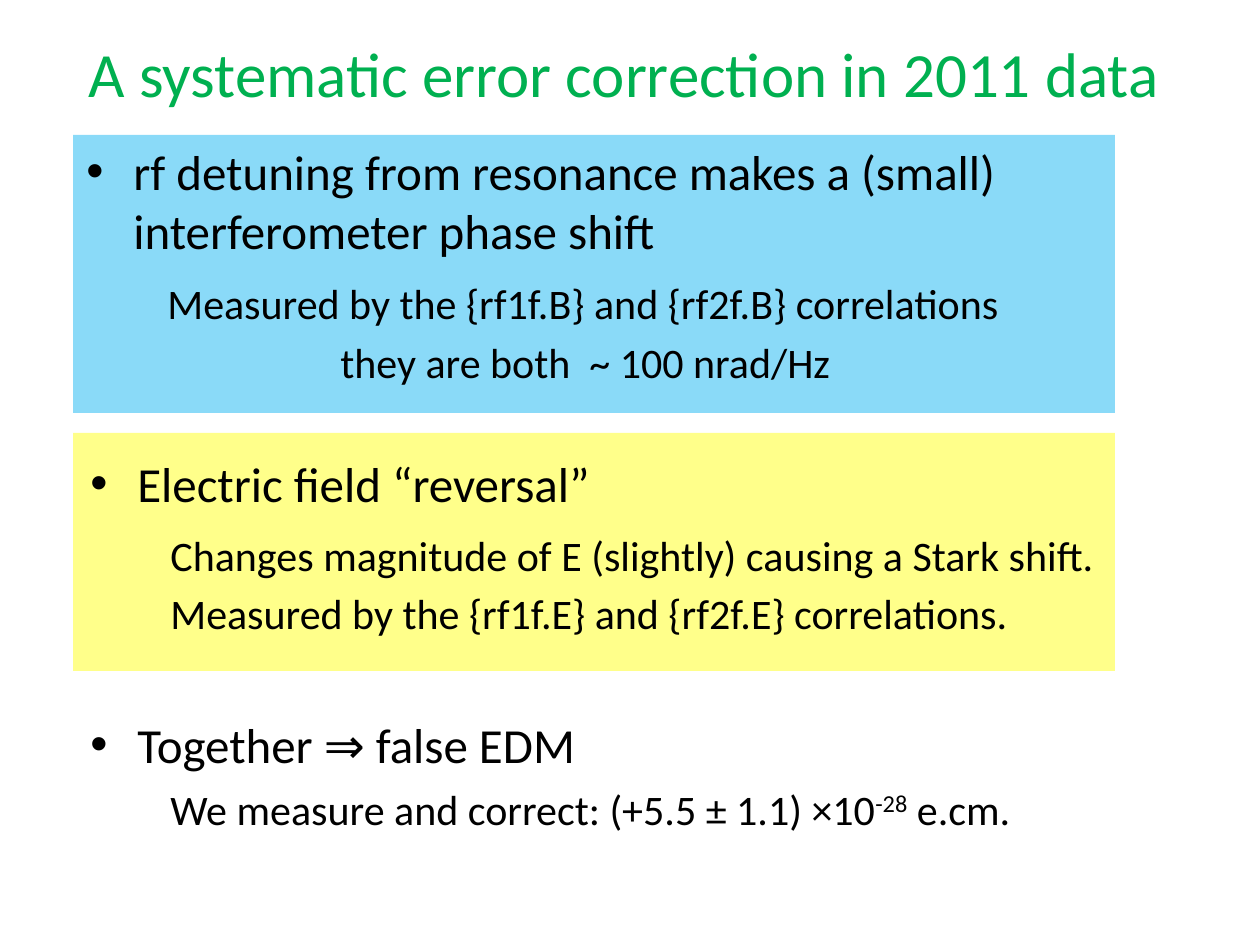
import pptx
import pptx.dml.color
import pptx.enum.shapes
import pptx.enum.text
import pptx.oxml.ns
import pptx.util
from lxml import etree

PX_PER_INCH = 126
EMU_PER_PX = 914400 / PX_PER_INCH
FONT = "Calibri"
COLORS = {
    "title": "00B050",
    "text": "000000",
    "detuning": "00B0F0",
    "reversal": "FFFF00",
}
PANEL_LEFT, PANEL_WIDTH = 73, 1042
HANG = 47


def px(n):
    return pptx.util.Emu(round(n * EMU_PER_PX))


def rgb(name):
    return pptx.dml.color.RGBColor.from_string(COLORS[name])


def add_xml(parent, tag, **attrs):
    return etree.SubElement(parent, pptx.oxml.ns.qn(tag), **attrs)


class Deck:
    """Holds the style and the current slide."""

    def __init__(self, width, height):
        self.prs = pptx.Presentation()
        self.prs.slide_width, self.prs.slide_height = px(width), px(height)
        self.slide = self.prs.slides.add_slide(self.prs.slide_layouts[5])

    def style(self, p, size, color="text"):
        p.font.name = FONT
        p.font.size = pptx.util.Pt(size)
        p.font.color.rgb = rgb(color)

    def title(self, text, x, y, w, h):
        sp = self.slide.shapes.title
        sp.left, sp.top, sp.width, sp.height = map(px, (x, y, w, h))
        tf = sp.text_frame
        tf.text = text
        tf.auto_size = pptx.enum.text.MSO_AUTO_SIZE.NONE
        tf.vertical_anchor = pptx.enum.text.MSO_ANCHOR.TOP
        p = tf.paragraphs[0]
        p.alignment = pptx.enum.text.PP_ALIGN.CENTER
        self.style(p, 36, "title")

    def panel(self, color, y, h):
        """Adds a full-width, 46 % opaque background rectangle."""
        sp = self.slide.shapes.add_shape(
            pptx.enum.shapes.MSO_SHAPE.RECTANGLE,
            px(PANEL_LEFT), px(y), px(PANEL_WIDTH), px(h))
        sp.shadow.inherit = False
        sp.line.fill.background()
        sp.fill.solid()
        sp.fill.fore_color.rgb = rgb(color)
        clr = sp.fill._xPr.find(".//" + pptx.oxml.ns.qn("a:srgbClr"))
        add_xml(clr, "a:alpha", val="46000")

    def text_box(self, x, y, w, h):
        sp = self.slide.shapes.add_textbox(px(x), px(y), px(w), px(h))
        sp.text_frame.word_wrap = True
        return sp.text_frame

    def bullet(self, text, x, y, w, h):
        p = self.text_box(x, y, w, h).paragraphs[0]
        p.text = text
        self.style(p, 28)
        pPr = p._p.get_or_add_pPr()
        pPr.set("marL", str(px(HANG)))
        pPr.set("indent", str(-px(HANG)))
        mark = etree.Element(pptx.oxml.ns.qn("a:buFont"), typeface="Arial")
        pPr.insert(0, mark)
        char = etree.Element(pptx.oxml.ns.qn("a:buChar"), char="•")
        mark.addnext(char)

    def details(self, lines, x, y, w, h):
        """Adds (indent, runs) lines; a run is (text, is_superscript)."""
        tf = self.text_box(x, y, w, h)
        for i, (indent, runs) in enumerate(lines):
            p = tf.add_paragraph() if i else tf.paragraphs[0]
            self.style(p, 24)
            if i:
                p.space_before = pptx.util.Pt(4.8)
            if indent:
                p._p.get_or_add_pPr().set("marL", str(px(indent)))
            for text, is_superscript in runs:
                r = p.add_run()
                r.text = text
                if is_superscript:
                    r._r.get_or_add_rPr().set("baseline", "30000")


def plain(text, indent=0):
    return indent, [(text, False)]


def main():
    deck = Deck(1260, 945)
    deck.title("A systematic error correction in 2011 data", 15, 28, 1218, 100)

    deck.panel("reversal", 433, 238)
    deck.bullet("Electric field “reversal”", 78, 447, 809, 93)
    deck.details([
        plain("Changes magnitude of E (slightly) causing a Stark shift."),
        plain("Measured by the {rf1f.E} and {rf2f.E} correlations."),
    ], 158, 523, 999, 129)

    deck.panel("detuning", 135, 278)
    deck.bullet("rf detuning from resonance makes a (small) "
                "interferometer phase shift", 74, 135, 1071, 156)
    deck.details([
        plain("Measured by the {rf1f.B} and {rf2f.B} correlations"),
        plain("they are both  ~ 100 nrad/Hz", 173),
    ], 155, 271, 872, 118)

    deck.details([
        (0, [("We measure and correct: (+5.5 ± 1.1) ×10", False),
             ("-28", True), (" e.cm.", False)]),
    ], 158, 777, 938, 83)
    deck.bullet("Together ⇒ false EDM", 78, 708, 1148, 93)

    deck.prs.save("out.pptx")


if __name__ == "__main__":
    main()
